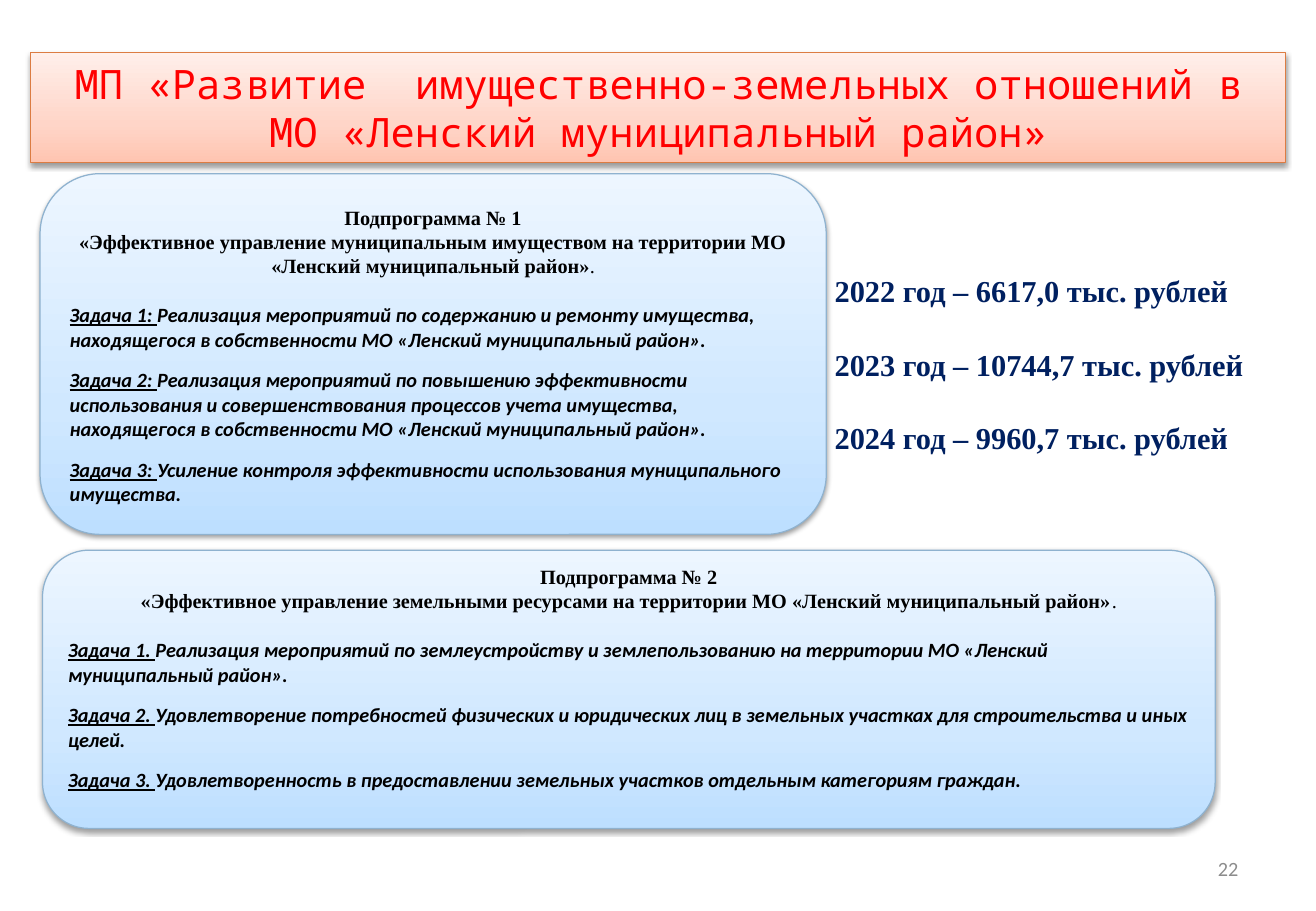
from pptx import Presentation
from pptx.dml.color import RGBColor
from pptx.enum.shapes import MSO_SHAPE as SHAPE
from pptx.enum.text import MSO_ANCHOR as ANCHOR, PP_ALIGN as ALIGN
from pptx.oxml import parse_xml
from pptx.oxml.ns import nsdecls
from pptx.util import Inches, Pt

THEME = {
    "title": {"font": "Noto Sans Mono", "size": 24, "color": "FF0000"},
    "heading": {"font": "Times New Roman", "size": 12, "color": "000000"},
    "task": {"font": "Calibri", "size": 12, "color": "000000", "bold": True, "italic": True},
    "budget": {"font": "Times New Roman", "size": 18, "color": "002060", "bold": True},
    "number": {"font": "Calibri", "size": 12, "color": "8C8C8C"},
    "peach": {"stops": [(0, "FFC5B1"), (35, "FFD5C8"), (100, "FFEFEA")], "line": "DC7C42"},
    "blue": {"stops": [(0, "BDDFFF"), (35, "D0E8FF"), (100, "EDF6FF")], "line": "8FB2CF"},
}


def add_run(p, text, font, size, color, bold=False, italic=False, underline=False):
    r = p.add_run()
    r.text = text
    r.font.name = font
    r.font.size = Pt(size)
    r.font.color.rgb = RGBColor.from_string(color)
    r.font.bold = bold
    r.font.italic = italic
    r.font.underline = underline


def add_panel(kind, box, look):
    s = slide.shapes.add_shape(kind, *map(Inches, box))
    stops = "".join(
        f'<a:gs pos="{pos * 1000}"><a:srgbClr val="{color}"/></a:gs>'
        for pos, color in look["stops"]
    )
    s._element.spPr.append(parse_xml(
        f'<a:gradFill {nsdecls("a")} rotWithShape="1"><a:gsLst>{stops}</a:gsLst>'
        '<a:lin ang="16200000" scaled="0"/></a:gradFill>'
    ))
    s.line.color.rgb = RGBColor.from_string(look["line"])
    s.line.width = Pt(0.75)
    s.shadow.inherit = False
    s._element.spPr[-1].append(parse_xml(
        f'<a:outerShdw {nsdecls("a")} blurRad="{Pt(3.1)}" dist="{Pt(1.6)}" dir="5400000" '
        'rotWithShape="0"><a:srgbClr val="000000"><a:alpha val="38000"/></a:srgbClr></a:outerShdw>'
    ))
    s.text_frame.word_wrap = True
    return s.text_frame


prs = Presentation()
prs.slide_width = Inches(10.83)
prs.slide_height = Inches(7.5)
slide = prs.slides.add_slide(prs.slide_layouts[6])

number = slide.shapes.add_textbox(Inches(7.76), Inches(6.95), Inches(2.53), Inches(0.4))
tf = number.text_frame
tf.word_wrap = True
tf.vertical_anchor = ANCHOR.MIDDLE
p = tf.paragraphs[0]
p.alignment = ALIGN.RIGHT
add_run(p, "22", **THEME["number"])

tf = add_panel(SHAPE.RECTANGLE, (0.25, 0.43, 10.33, 0.91), THEME["peach"])
p = tf.paragraphs[0]
p.alignment = ALIGN.CENTER
p.line_spacing = Pt(28.5)
add_run(
    p,
    "МП «Развитие  имущественно-земельных отношений в МО «Ленский муниципальный район»",
    **THEME["title"],
)

budget = slide.shapes.add_textbox(Inches(6.77), Inches(1.93), Inches(3.65), Inches(2.49))
tf = budget.text_frame
tf.word_wrap = True
tf.margin_top = Inches(0.31)
for i, (year, amount) in enumerate([(2022, "6617,0"), (2023, "10744,7"), (2024, "9960,7")]):
    p = tf.add_paragraph() if i else tf.paragraphs[0]
    p.line_spacing = Pt(21.75)
    p.space_before = Pt(21.75 if i else 0)
    add_run(p, f"{year} год – {amount} тыс. рублей", **THEME["budget"])

subprograms = [
    (
        (0.33, 1.43, 6.47, 2.97), 0.11, ":",
        "«Эффективное управление муниципальным имуществом на территории МО «Ленский муниципальный район»",
        [
            "Реализация мероприятий по содержанию и ремонту имущества, находящегося в собственности МО «Ленский муниципальный район».",
            "Реализация мероприятий по повышению эффективности использования и совершенствования процессов учета имущества, находящегося в собственности МО «Ленский муниципальный район».",
            "Усиление контроля эффективности использования муниципального имущества.",
        ],
    ),
    (
        (0.35, 4.53, 9.65, 2.29), 0, ".",
        "«Эффективное управление земельными ресурсами на территории МО «Ленский муниципальный район»",
        [
            "Реализация мероприятий по землеустройству и землепользованию на территории МО «Ленский муниципальный район».",
            "Удовлетворение потребностей физических и юридических лиц в земельных участках для строительства и иных целей.",
            "Удовлетворенность в предоставлении земельных участков отдельным категориям граждан.",
        ],
    ),
]
for n, (box, margin, mark, name, tasks) in enumerate(subprograms, 1):
    tf = add_panel(SHAPE.ROUNDED_RECTANGLE, box, THEME["blue"])
    tf.vertical_anchor = ANCHOR.TOP
    tf.margin_top = Inches(margin)

    p = tf.paragraphs[0]
    add_run(p, f"Подпрограмма № {n}", bold=True, **THEME["heading"])
    p = tf.add_paragraph()
    add_run(p, name, bold=True, **THEME["heading"])
    add_run(p, ".", **THEME["heading"])
    for p in tf.paragraphs:
        p.alignment = ALIGN.CENTER

    for i, task in enumerate(tasks, 1):
        p = tf.add_paragraph()
        p.alignment = ALIGN.LEFT
        p.space_before = Pt(14.5 if i == 1 else 9.5)
        add_run(p, f"Задача {i}{mark} ", underline=True, **THEME["task"])
        add_run(p, task, **THEME["task"])

    for p in tf.paragraphs:
        p.line_spacing = Pt(14.5)

prs.save("out.pptx")
